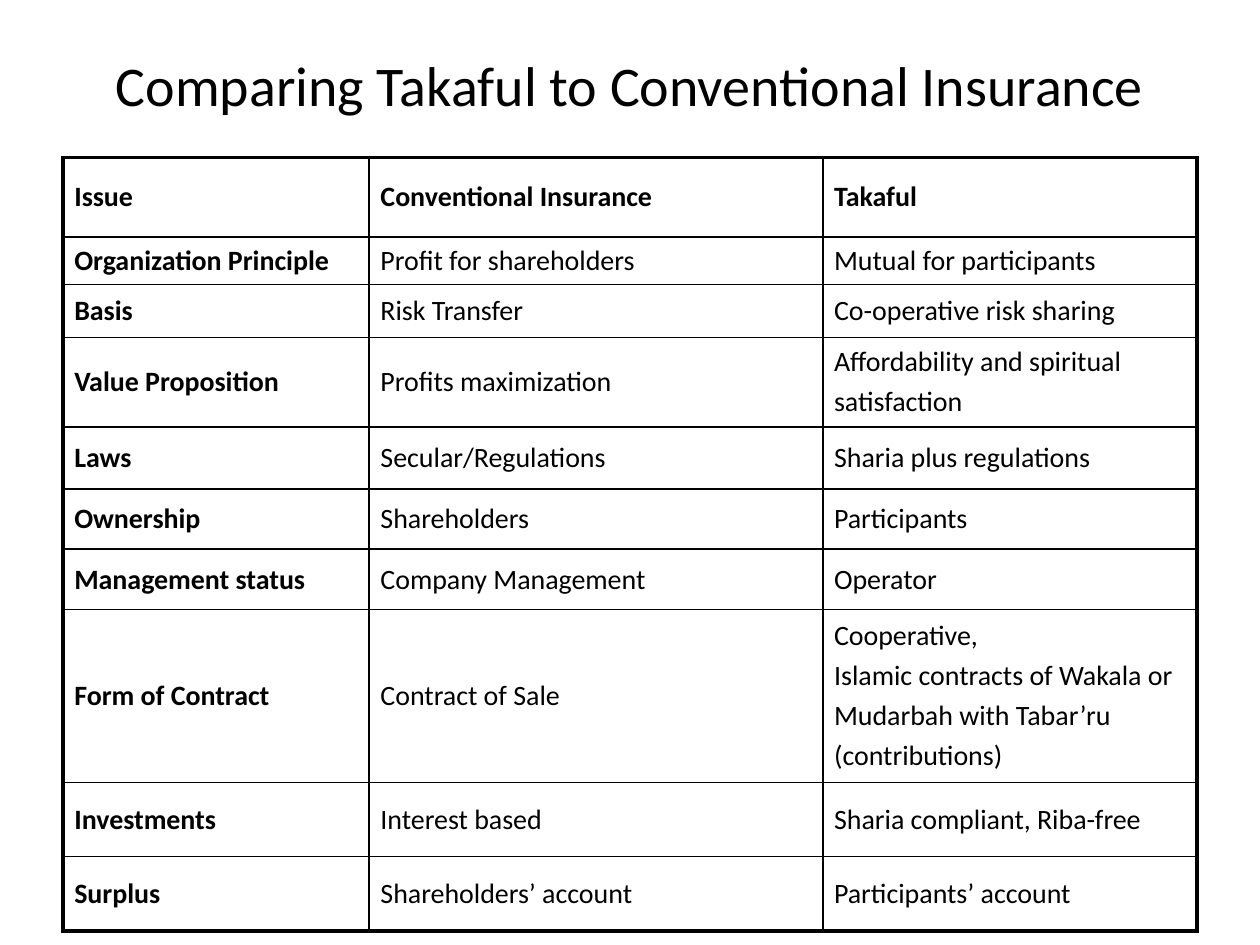
from lxml import etree
from pptx import Presentation
from pptx import util as u
from pptx.dml.color import RGBColor
from pptx.enum import text
from pptx.oxml.ns import qn

BLACK = RGBColor(0, 0, 0)
FONT = "Calibri"
THIN, THICK = 1, 2.25
SIZE = 16
COLUMNS = [2.43, 3.6, 2.97]
ROWS = [0.63, 0.38, 0.42, 0.71, 0.49, 0.48, 0.48, 1.37, 0.59, 0.59]
COMPARISON = [
    ("Issue", "Conventional Insurance", "Takaful"),
    ("Organization Principle", "Profit for shareholders", "Mutual for participants"),
    ("Basis", "Risk Transfer", "Co-operative risk sharing"),
    ("Value Proposition", "Profits maximization",
     "Affordability and spiritual\nsatisfaction"),
    ("Laws", "Secular/Regulations", "Sharia plus regulations"),
    ("Ownership", "Shareholders", "Participants"),
    ("Management status", "Company Management", "Operator"),
    ("Form of Contract", "Contract of Sale",
     "Cooperative,\nIslamic contracts of Wakala or\nMudarbah with Tabar’ru\n(contributions)"),
    ("Investments", "Interest based", "Sharia compliant, Riba-free"),
    ("Surplus", "Shareholders’ account", "Participants’ account"),
]


def apply(target, values):
    for name, value in values.items():
        setattr(target, name, value)


def format_font(paragraph, size, bold):
    apply(paragraph.font, {"name": FONT, "size": u.Pt(size), "bold": bold})
    paragraph.font.color.rgb = BLACK


def place_title(slide, box):
    title = slide.shapes.title
    apply(title, dict(zip(("left", "top", "width", "height"), map(u.Inches, box))))
    title.text_frame.text = "Comparing Takaful to Conventional Insurance"
    title.text_frame.vertical_anchor = text.MSO_ANCHOR.MIDDLE
    heading = title.text_frame.paragraphs[0]
    heading.alignment = text.PP_ALIGN.CENTER
    format_font(heading, 32, False)


def draw_borders(cell, widths):
    properties = cell._tc.get_or_add_tcPr()
    for index, (side, width) in enumerate(widths.items()):
        line = etree.Element(qn(f"a:ln{side}"), w=str(u.Pt(width)))
        fill = etree.SubElement(line, qn("a:solidFill"))
        etree.SubElement(fill, qn("a:srgbClr"), val=str(BLACK))
        properties.insert(index, line)


def fill_cell(cell, wording, bold):
    cell.fill.background()
    apply(cell, {
        "text": wording,
        "vertical_anchor": text.MSO_ANCHOR.MIDDLE,
        "margin_left": u.Inches(0.09),
        "margin_right": u.Inches(0.09),
        "margin_top": u.Inches(0.05),
        "margin_bottom": u.Inches(0.05),
    })
    for index, paragraph in enumerate(cell.text_frame.paragraphs):
        if index:
            paragraph.space_before = u.Pt(0.2 * SIZE)
        format_font(paragraph, SIZE, bold)


def place_comparison(slide, box):
    last_row, last_column = len(ROWS) - 1, len(COLUMNS) - 1
    table = slide.shapes.add_table(
        len(ROWS), len(COLUMNS), *map(u.Inches, box)).table
    apply(table, {"first_row": False, "horz_banding": False})
    for column, width in zip(table.columns, COLUMNS):
        column.width = u.Inches(width)
    for row, height in zip(table.rows, ROWS):
        row.height = u.Inches(height)
    for r, issue in enumerate(COMPARISON):
        for c, wording in enumerate(issue):
            cell = table.cell(r, c)
            fill_cell(cell, wording, r == 0 or c == 0)
            outer = {"L": c == 0, "R": c == last_column,
                     "T": r == 0, "B": r == last_row}
            draw_borders(cell, {side: THICK if edge else THIN
                                for side, edge in outer.items()})


def main():
    deck = Presentation()
    apply(deck, {"slide_width": u.Inches(10), "slide_height": u.Inches(7.5)})
    slide = deck.slides.add_slide(deck.slide_layouts[5])
    place_title(slide, (0.5, 0.17, 9, 1))
    place_comparison(slide, (0.5, 1.25, sum(COLUMNS), sum(ROWS)))
    deck.save("out.pptx")


if __name__ == "__main__":
    main()
